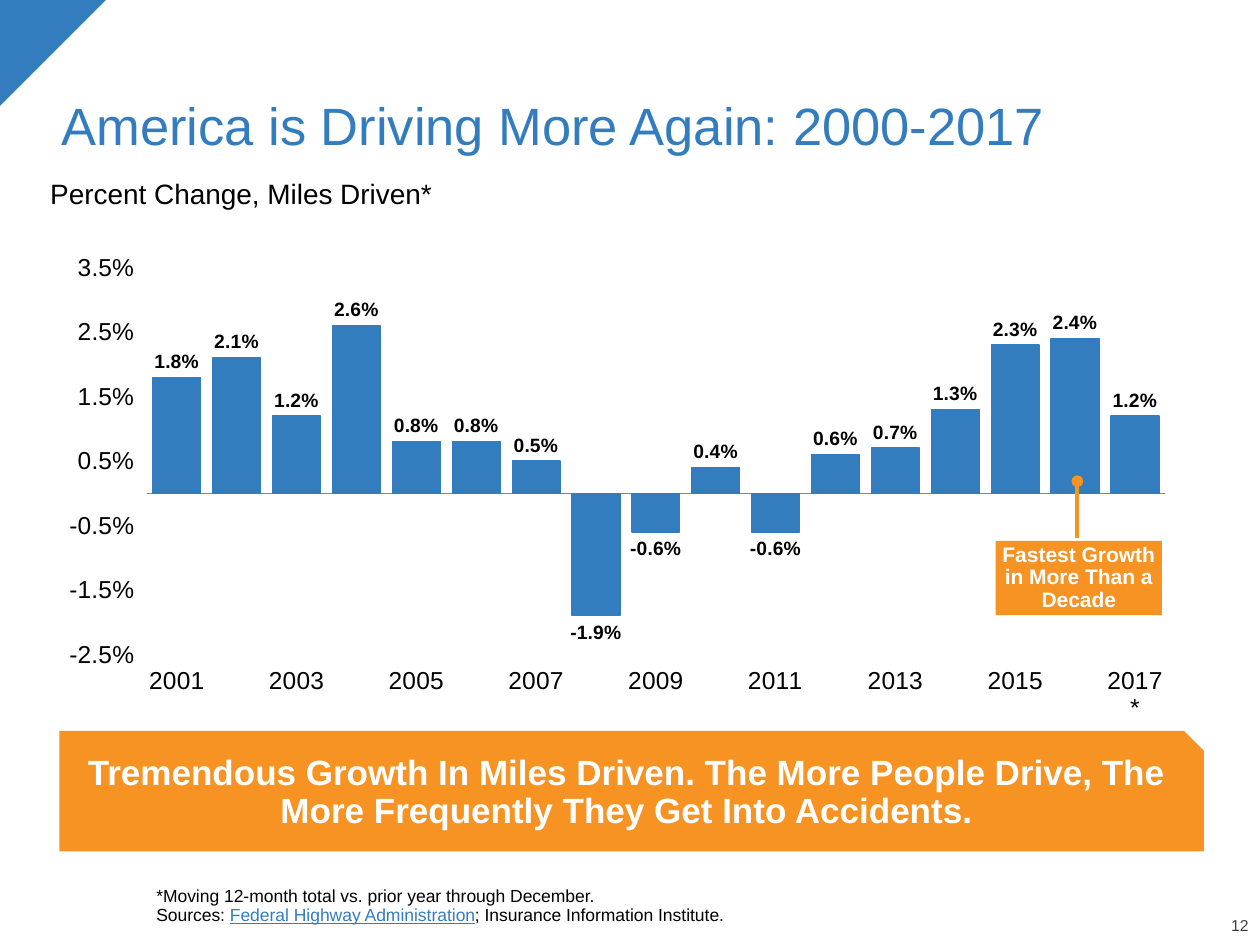
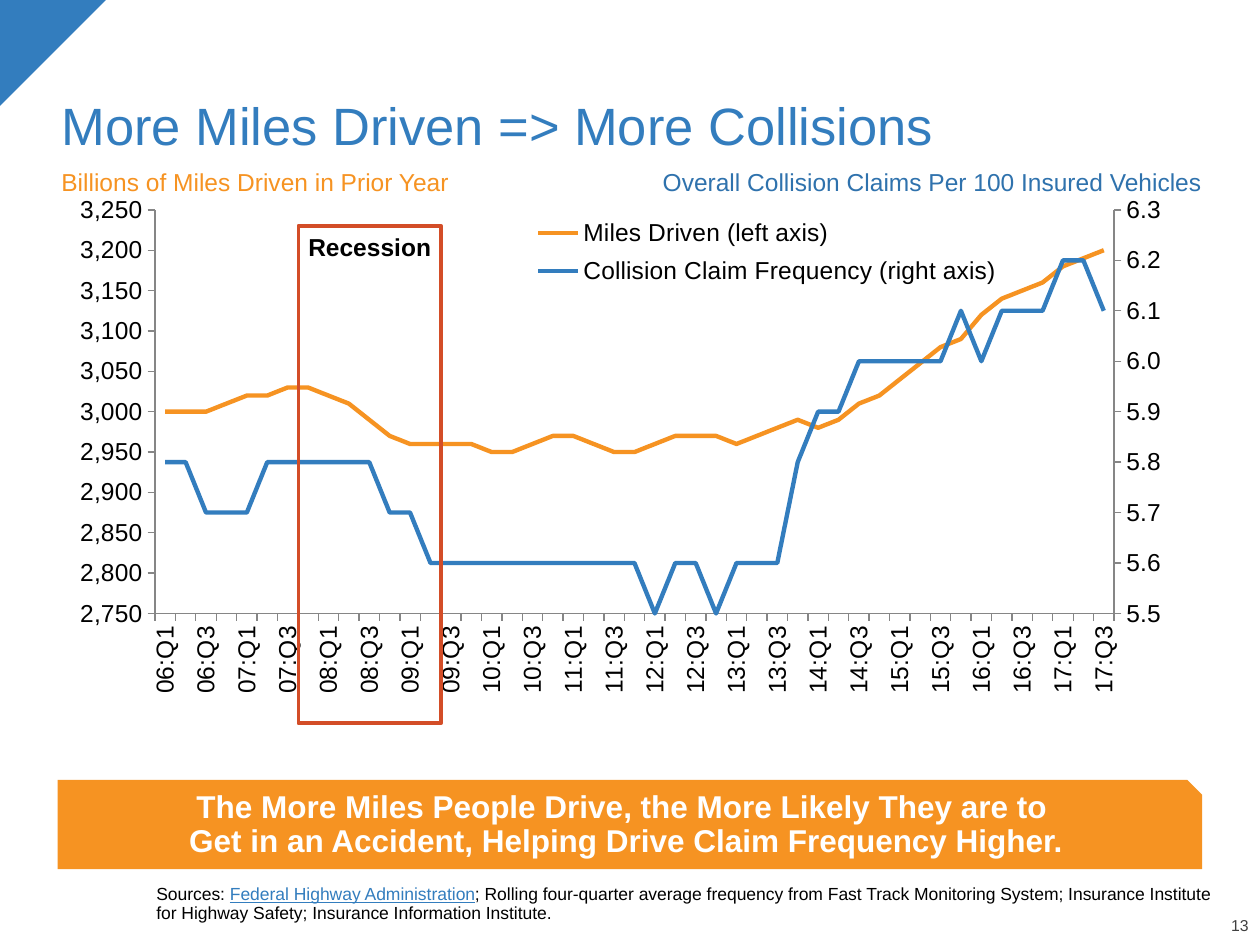
from copy import deepcopy
from pptx import Presentation
from pptx.chart.axis import CategoryAxis, ValueAxis
from pptx.chart.data import CategoryChartData
from pptx.dml.color import RGBColor
from pptx.enum.chart import (XL_CHART_TYPE, XL_LABEL_POSITION, XL_LEGEND_POSITION,
                             XL_TICK_LABEL_POSITION, XL_TICK_MARK)
from pptx.enum.shapes import MSO_CONNECTOR, MSO_SHAPE
from pptx.enum.text import MSO_ANCHOR, PP_ALIGN
from pptx.oxml import parse_xml
from pptx.oxml.ns import nsdecls
from pptx.util import Pt

BLUE = RGBColor(0x33, 0x7D, 0xBE)
DEEP = RGBColor(0x2F, 0x72, 0xAD)
ORANGE = RGBColor(0xF6, 0x93, 0x22)
RED = RGBColor(0xD3, 0x4D, 0x27)
BLACK = RGBColor(0, 0, 0)
WHITE = RGBColor(0xFF, 0xFF, 0xFF)
DARK = RGBColor(0x40, 0x40, 0x40)
GREY = RGBColor(0x86, 0x86, 0x86)
FONT = "Arial"
AGENCY = ("Federal Highway Administration", BLUE)


def write(shape, *paras, size=14, color=BLACK, bold=False, align=PP_ALIGN.LEFT,
          anchor=MSO_ANCHOR.TOP, inset=(7.2, 3.6, 7.2, 3.6), wrap=True,
          spacing=0.9, before=0):
    """Each paragraph is a string or a list of strings, "\n" breaks and (link text, colour)."""
    frame = shape.text_frame
    frame.word_wrap = wrap
    frame.vertical_anchor = anchor
    (frame.margin_left, frame.margin_top,
     frame.margin_right, frame.margin_bottom) = map(Pt, inset)
    for i, para in enumerate(paras):
        p = frame.add_paragraph() if i else frame.paragraphs[0]
        p.alignment = align
        p.line_spacing = spacing
        if before and i:
            p.space_before = Pt(before)
        for piece in [para] if isinstance(para, str) else para:
            if piece == "\n":
                p.add_line_break()
                continue
            linked = isinstance(piece, tuple)
            words, tint = piece if linked else (piece, color)
            run = p.add_run()
            run.text = words
            font = run.font
            font.name, font.size, font.bold = FONT, Pt(size), bold
            font.color.rgb = tint
            if linked:
                font.underline = True


def place(parent, spot, x, y, w, h):
    """Give a chart part a fixed place, in fractions of the chart."""
    for old in parent.xpath("c:layout"):
        parent.remove(old)
    inner = '<c:layoutTarget val="inner"/>' if spot == 0 else ""
    parent.insert(spot, parse_xml(
        f'<c:layout {nsdecls("c")}><c:manualLayout>{inner}'
        '<c:xMode val="edge"/><c:yMode val="edge"/>'
        f'<c:x val="{x}"/><c:y val="{y}"/><c:w val="{w}"/><c:h val="{h}"/>'
        '</c:manualLayout></c:layout>'))


class Deck:
    def __init__(self):
        self.prs = Presentation()
        self.prs.slide_width, self.prs.slide_height = Pt(720), Pt(540)
        self.slide = None

    def start(self, title, number):
        """Open a slide with its corner, title and page number."""
        self.slide = self.prs.slides.add_slide(self.prs.slide_layouts[6])
        corner = self.shape(MSO_SHAPE.RIGHT_TRIANGLE, (0, 0, 60.5, 60.5), fill=BLUE)
        corner.rotation = 90
        self.text((679, 525, 34.5, 9), number, size=9, color=DARK, align=PP_ALIGN.RIGHT,
                  anchor=MSO_ANCHOR.BOTTOM, inset=(0, 0, 0, 0))
        self.text((28, 18, 666, 75), title, size=30, color=BLUE, anchor=MSO_ANCHOR.BOTTOM)

    def text(self, box, *paras, **style):
        write(self.slide.shapes.add_textbox(*map(Pt, box)), *paras, **style)

    def shape(self, kind, box, fill=None, line=None):
        shape = self.slide.shapes.add_shape(kind, *map(Pt, box))
        shape.shadow.inherit = False
        if fill is None:
            shape.fill.background()
        else:
            shape.fill.solid()
            shape.fill.fore_color.rgb = fill
        if line is None:
            shape.line.fill.background()
        else:
            shape.line.color.rgb = line
            shape.line.width = Pt(2.25)
        return shape

    def band(self, box, *paras, size):
        write(self.shape(MSO_SHAPE.SNIP_1_RECTANGLE, box, fill=ORANGE), *paras, size=size,
              color=WHITE, bold=True, align=PP_ALIGN.CENTER, anchor=MSO_ANCHOR.MIDDLE,
              inset=(7.2, 3.6, 7.2, 7.2))

    def notes(self, top, high, pieces):
        self.text((89.3, top, 605, high), pieces, size=10, anchor=MSO_ANCHOR.BOTTOM,
                  inset=(0, 0, 0, 0))

    def stem(self, x, low, high):
        """Line up from a callout, ending in a dot."""
        line = self.slide.shapes.add_connector(MSO_CONNECTOR.STRAIGHT, *map(Pt, (x, low, x, high)))
        line.line.color.rgb = ORANGE
        line.line.width = Pt(2.25)
        line.line._get_or_add_ln().append(parse_xml(f'<a:tailEnd {nsdecls("a")} type="oval"/>'))
        line._element.spPr.append(parse_xml(f'<a:effectLst {nsdecls("a")}/>'))

    def chart(self, kind, box, cats, series, plot, low, high, step, fmt):
        data = CategoryChartData()
        data.categories = cats
        for name, vals in series:
            data.add_series(name, vals)
        chart = self.slide.shapes.add_chart(kind, *map(Pt, box), data).chart
        chart.has_title = chart.has_legend = False
        chart.font.name, chart.font.size = FONT, Pt(14)
        chart.font.color.rgb = BLACK
        chart.plots[0].vary_by_categories = False
        place(chart._chartSpace.xpath("c:chart/c:plotArea")[0], 0, *plot)
        for axis in (chart.category_axis, chart.value_axis):
            axis.has_major_gridlines = False
            axis.major_tick_mark = XL_TICK_MARK.OUTSIDE
            axis.minor_tick_mark = XL_TICK_MARK.NONE
            axis.format.line.color.rgb = GREY
        scale(chart.value_axis, low, high, step, fmt)
        return chart


def scale(axis, low, high, step, fmt):
    axis.minimum_scale, axis.maximum_scale, axis.major_unit = low, high, step
    axis.tick_labels.number_format = fmt
    axis.tick_labels.number_format_is_linked = False


def split(chart):
    """Move the second line to an axis on the right and return that axis."""
    area = chart._chartSpace.xpath("c:chart/c:plotArea")[0]
    first = area.xpath("c:lineChart")[0]
    twin = deepcopy(first)
    first.remove(first.xpath("c:ser")[1])
    twin.remove(twin.xpath("c:ser")[0])
    first.addnext(twin)
    cat = deepcopy(area.xpath("c:catAx")[0])
    val = deepcopy(area.xpath("c:valAx")[0])
    area.xpath("c:valAx")[0].addnext(val)
    val.addnext(cat)
    for node, own, other in ((cat, "5001", "5002"), (val, "5002", "5001")):
        node.xpath("c:axId")[0].set("val", own)
        node.xpath("c:crossAx")[0].set("val", other)
    for node, own in zip(twin.xpath("c:axId"), ("5001", "5002")):
        node.set("val", own)
    val.xpath("c:axPos")[0].set("val", "r")
    val.xpath("c:crosses")[0].set("val", "max")
    CategoryAxis(cat).visible = False
    return ValueAxis(val)


def growth(deck):
    deck.start("America is Driving More Again: 2000-2017", "12")
    deck.text((21.6, 99.4, 666, 31), "Percent Change, Miles Driven*", size=16)
    deck.notes(486.7, 41.8, ["*Moving 12-month total vs. prior year through December. ", "\n",
                             "Sources: ", AGENCY, "; Insurance Information Institute."])

    # Column chart, every second year named
    cats = ["" if year % 2 == 0 else str(year) for year in range(2001, 2017)] + ["2017*"]
    vals = [0.018, 0.021, 0.012, 0.026, 0.008, 0.008, 0.005, -0.019, -0.006,
            0.004, -0.006, 0.006, 0.007, 0.013, 0.023, 0.024, 0.012]
    chart = deck.chart(XL_CHART_TYPE.COLUMN_CLUSTERED, (27.4, 116, 650, 308), cats,
                       [("Series 1", vals)], (0.087, 0.06, 0.895, 0.778),
                       -0.025, 0.04, 0.01, "0.0%")
    for axis in (chart.category_axis, chart.value_axis):
        axis.tick_label_position = XL_TICK_LABEL_POSITION.LOW
    chart.category_axis.major_tick_mark = XL_TICK_MARK.NONE
    chart.value_axis.format.line.fill.background()
    plot = chart.plots[0]
    plot.gap_width = 25
    bars = plot.series[0]
    bars.invert_if_negative = False
    bars.format.fill.solid()
    bars.format.fill.fore_color.rgb = BLUE
    bars.format.line.color.rgb = BLUE
    bars.format.line.width = Pt(0.75)
    tags = bars.data_labels
    tags.show_value = True
    tags.position = XL_LABEL_POSITION.OUTSIDE_END
    tags.number_format, tags.number_format_is_linked = "0.0%", False
    tags.font.name, tags.font.size, tags.font.bold = FONT, Pt(11), True
    tags.font.color.rgb = BLACK

    # Callout and message
    write(deck.shape(MSO_SHAPE.RECTANGLE, (569, 309, 95, 42.5), fill=ORANGE),
          "Fastest Growth in More Than a Decade", size=12, color=WHITE, bold=True,
          align=PP_ALIGN.CENTER, anchor=MSO_ANCHOR.MIDDLE, inset=(3.6, 0, 3.6, 0))
    deck.stem(615.6, 307.4, 275)
    deck.band((34, 417.6, 654, 69), "Tremendous Growth In Miles Driven. The More People Drive, "
              "The More Frequently They Get Into Accidents.", size=20)


def claims(deck):
    deck.start("More Miles Driven => More Collisions", "13")
    deck.text((28, 93.6, 274, 31), "Billions of Miles Driven in Prior Year", color=ORANGE)
    deck.notes(495.4, 32.4, ["Sources: ", AGENCY, "; Rolling four-quarter average frequency from "
                             "Fast Track Monitoring System; Insurance Institute for Highway "
                             "Safety; Insurance Information Institute."])
    deck.band((33, 445.7, 654, 51), "The More Miles People Drive, the More Likely They are to ",
              "Get in an Accident, Helping Drive Claim Frequency Higher.", size=18)

    # Two lines by quarter
    cats = [f"{year:02}:Q{part}" for year in range(6, 18) for part in range(1, 5)][:-1]
    miles = [3000, 3000, 3000, 3010, 3020, 3020, 3030, 3030, 3020, 3010, 2990, 2970,
             2960, 2960, 2960, 2960, 2950, 2950, 2960, 2970, 2970, 2960, 2950, 2950,
             2960, 2970, 2970, 2970, 2960, 2970, 2980, 2990, 2980, 2990, 3010, 3020,
             3040, 3060, 3080, 3090, 3120, 3140, 3150, 3160, 3180, 3190, 3200]
    rate = [5.8, 5.8, 5.7, 5.7, 5.7, 5.8, 5.8, 5.8, 5.8, 5.8, 5.8, 5.7,
            5.7, 5.6, 5.6, 5.6, 5.6, 5.6, 5.6, 5.6, 5.6, 5.6, 5.6, 5.6,
            5.5, 5.6, 5.6, 5.5, 5.6, 5.6, 5.6, 5.8, 5.9, 5.9, 6, 6,
            6, 6, 6, 6.1, 6, 6.1, 6.1, 6.1, 6.2, 6.2, 6.1]
    chart = deck.chart(XL_CHART_TYPE.LINE, (33, 109.4, 654, 330), cats,
                       [("Miles Driven (left axis)", miles),
                        ("Collision Claim Frequency (right axis)", rate)],
                       (0.085, 0.032, 0.838, 0.699), 2750, 3250, 50, "#,##0")
    for line, tint in zip(chart.plots[0].series, (ORANGE, BLUE)):
        line.smooth = False
        line.format.line.color.rgb = tint
        line.format.line.width = Pt(2.5)
    scale(split(chart), 5.5, 6.3, 0.1, "0.0")

    # Upright quarter names, every second one
    axis = chart.category_axis
    axis.tick_labels.font.size = Pt(14)
    node = axis._element
    node.xpath("c:txPr/a:bodyPr")[0].set("rot", "-5400000")
    node.xpath("c:noMultiLvlLbl")[0].addprevious(
        parse_xml(f'<c:tickLblSkip {nsdecls("c")} val="2"/>'))

    # Legend inside the plot
    chart.has_legend = True
    chart.legend.position = XL_LEGEND_POSITION.BOTTOM
    chart.legend.include_in_layout = False
    place(chart.legend._element, 1, 0.4, 0.03, 0.44, 0.15)

    # Right heading and recession frame
    deck.text((361.4, 93.6, 332.6, 31), "Overall Collision Claims Per 100 Insured Vehicles",
              color=DEEP, align=PP_ALIGN.RIGHT)
    write(deck.shape(MSO_SHAPE.RECTANGLE, (170.6, 129, 81.4, 284.4), line=RED),
          "Recession", bold=True, align=PP_ALIGN.CENTER, wrap=False, spacing=1.0)


def main():
    deck = Deck()
    growth(deck)
    claims(deck)
    deck.prs.save("out.pptx")


if __name__ == "__main__":
    main()
